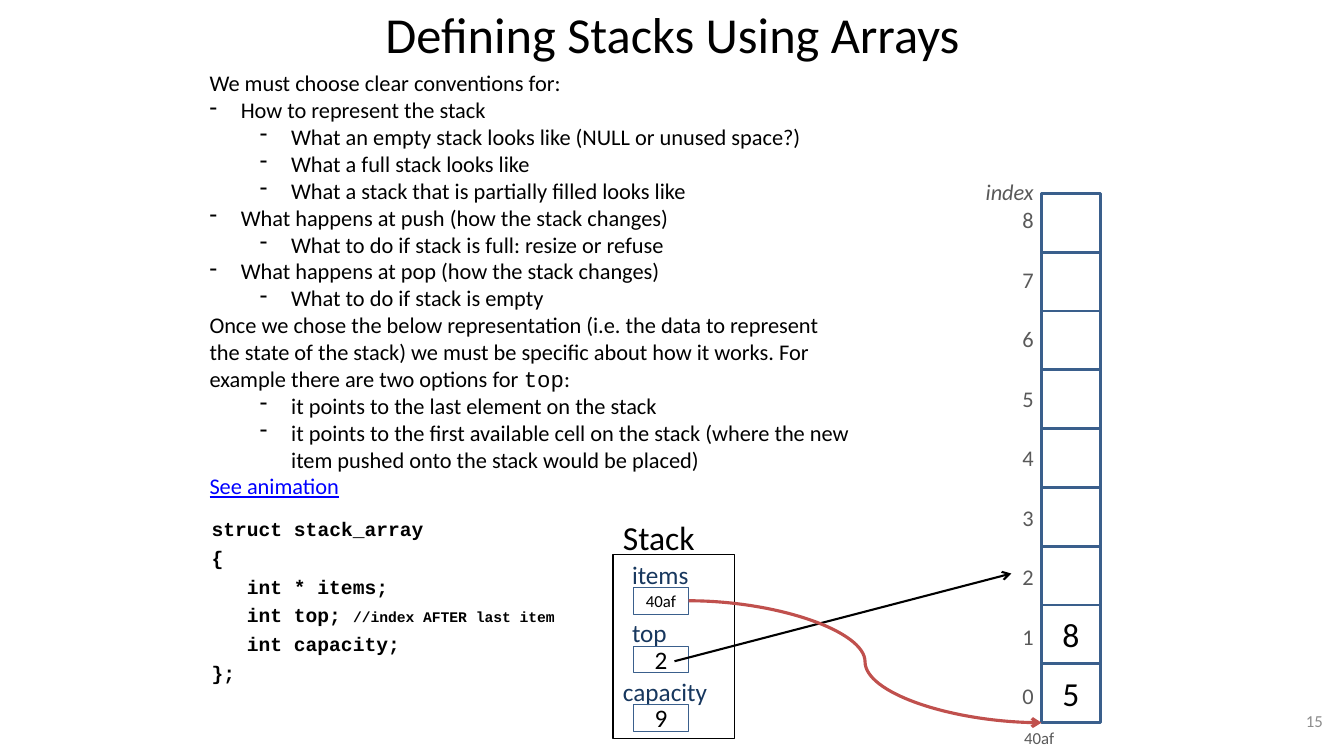
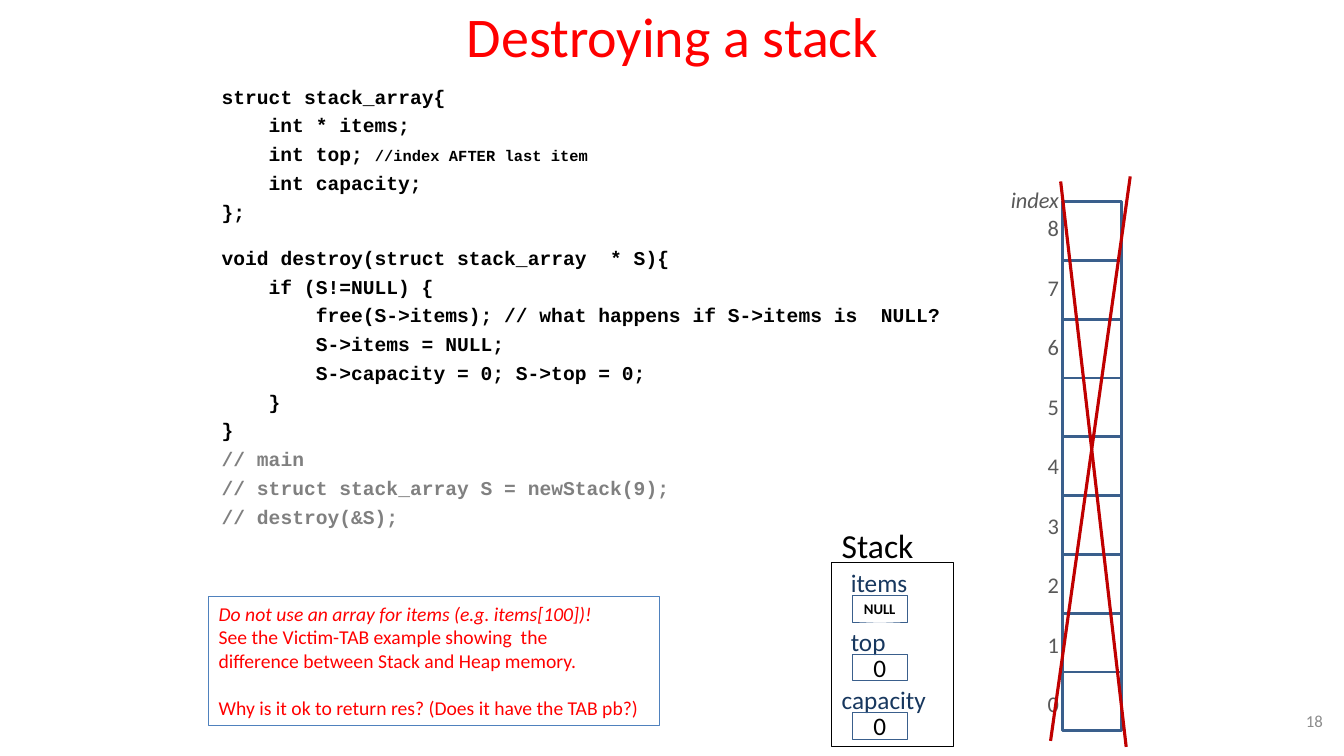
from lxml.etree import SubElement
from pptx import Presentation
from pptx.dml.color import RGBColor
from pptx.enum.shapes import MSO_CONNECTOR, MSO_SHAPE
from pptx.enum.text import MSO_ANCHOR, MSO_AUTO_SIZE, PP_ALIGN
from pptx.oxml.ns import qn
from pptx.util import Inches, Pt

COLORS = {
    "black": "000000", "white": "FFFFFF", "red": "FF0000", "cross": "C00000",
    "navy": "17375E", "cell": "3A5F8C", "frame": "4F81BD", "curve": "C0504D",
    "label": "595959", "comment": "808080", "number": "8C8C8C", "link": "0000FF",
}
BODY_FONT, CODE_FONT = "Calibri", "Courier New"
CODE_SIZE = 14
CODE_COLUMN = Pt(CODE_SIZE * 0.6)
CELL_COUNT, CELL_SIZE = 9, 5.25 / 9
LABEL_STEP, FIELD_STEP = 0.59, 0.58


def color(name):
    return RGBColor.from_string(COLORS[name])


def write_span(para, text, size=16, font=BODY_FONT, ink="black",
               bold=False, italic=False, underline=False):
    span = para.add_run()
    span.text = text
    style = span.font
    style.size, style.name = Pt(size), font
    style.bold, style.italic, style.underline = bold, italic, underline
    style.color.rgb = color(ink)


def write(frame, text, align=PP_ALIGN.LEFT, before=0, indent=0, bullet=None, **style):
    """Fill the first paragraph if it is empty, otherwise add one."""
    para = frame.paragraphs[0]
    if para.runs:
        para = frame.add_paragraph()
    para.alignment = align
    para.space_before = Pt(before)
    properties = para._p.get_or_add_pPr()
    properties.set("marL", str(int(indent)))
    if bullet:
        properties.set("indent", str(-Inches(0.31)))
        SubElement(properties, qn("a:buChar")).set("char", bullet)
    write_span(para, text, **style)
    return para


def add_text(page, left, top, width, height, text=None, wrap=False,
             anchor=MSO_ANCHOR.TOP, **style):
    box = page.shapes.add_textbox(Inches(left), Inches(top), Inches(width), Inches(height))
    frame = box.text_frame
    frame.word_wrap = wrap
    frame.vertical_anchor = anchor
    if text:
        write(frame, text, **style)
    return frame


def add_rect(page, left, top, width, height, line, weight, fill=None, text=None, **style):
    rect = page.shapes.add_shape(MSO_SHAPE.RECTANGLE, Inches(left), Inches(top),
                                 Inches(width), Inches(height))
    rect.shadow.inherit = False
    if fill:
        rect.fill.solid()
        rect.fill.fore_color.rgb = color(fill)
    else:
        rect.fill.background()
    rect.line.color.rgb = color(line)
    rect.line.width = Pt(weight)
    if text:
        frame = rect.text_frame
        frame.margin_left = frame.margin_right = 0
        frame.margin_top = frame.margin_bottom = 0
        frame.vertical_anchor = MSO_ANCHOR.MIDDLE
        write(frame, text, align=PP_ALIGN.CENTER, **style)
    return rect


def add_line(page, start, end, ink, weight, kind=MSO_CONNECTOR.STRAIGHT, arrow=False):
    ends = [Inches(value) for value in (*start, *end)]
    connector = page.shapes.add_connector(kind, *ends)
    connector.line.color.rgb = color(ink)
    connector.line.width = Pt(weight)
    if arrow:
        SubElement(connector.line._get_or_add_ln(), qn("a:tailEnd")).set("type", "arrow")
    SubElement(connector._element.spPr, qn("a:effectLst"))


def add_page(deck, title, number, top, height, size, ink):
    page = deck.slides.add_slide(deck.slide_layouts[5])
    box = page.shapes.title
    box.left, box.top = Inches(2.17), Inches(top)
    box.width, box.height = Inches(9), Inches(height)
    frame = box.text_frame
    frame.auto_size = MSO_AUTO_SIZE.NONE
    frame.vertical_anchor = MSO_ANCHOR.MIDDLE
    write(frame, title, align=PP_ALIGN.CENTER, size=size, ink=ink)
    add_text(page, 10.11, 6.95, 3.11, 0.4, str(number), wrap=True,
             anchor=MSO_ANCHOR.MIDDLE, align=PP_ALIGN.RIGHT, size=12, ink="number")
    return page


def add_code(page, left, top, width, height, blocks, note_size):
    """Each line is (columns of indent, code, optional small note)."""
    frame = add_text(page, left, top, width, height, wrap=True)
    for block_index, block in enumerate(blocks):
        for line_index, (columns, code, *notes) in enumerate(block):
            new_block = block_index > 0 and line_index == 0
            ink = "comment" if code.startswith("//") else "black"
            para = write(frame, code, before=16.3 if new_block else 3.7,
                         indent=columns * CODE_COLUMN, size=CODE_SIZE,
                         font=CODE_FONT, bold=True, ink=ink)
            for note in notes:
                write_span(para, note, size=note_size, font=CODE_FONT, bold=True)


def add_array(page, left, top, label_left, values=()):
    """Draw the cells with index 0 at the bottom; values fill them from there."""
    for index in range(CELL_COUNT):
        row = CELL_COUNT - 1 - index
        text = values[index] if index < len(values) else None
        add_rect(page, left, top + row * CELL_SIZE, CELL_SIZE, CELL_SIZE,
                 "cell", 2, fill="white", text=text, size=24)
        add_text(page, label_left, top + 0.08 + row * LABEL_STEP, 0.32, 0.37,
                 str(index), align=PP_ALIGN.RIGHT, ink="label")
    add_text(page, label_left - 0.36, top - 0.2, 0.68, 0.37, "index",
             align=PP_ALIGN.RIGHT, italic=True, ink="label")


def add_stack(page, left, top, items, top_value, capacity, items_style):
    add_text(page, left, top - 0.42, 1, 0.5, "Stack", size=24)
    number_style = {"size": 18}
    fields = [("items", 0.09, items, items_style),
              ("top", 0.09, top_value, number_style),
              ("capacity", 0, capacity, number_style)]
    for row, (name, shift, value, style) in enumerate(fields):
        field_top = top + row * FIELD_STEP
        add_text(page, left + shift, field_top, 1.21 - shift, 0.4, name,
                 size=18, ink="navy")
        add_rect(page, left + 0.2, field_top + 0.33, 0.55, 0.26, "cell", 0.25,
                 text=value, **style)
    add_rect(page, left, top, 1.21, 1.83, "black", 0.75)


def add_conventions(page, left, top, width, height):
    frame = add_text(page, left, top, width, height, wrap=True)

    def add_points(points):
        for level, text in points:
            write(frame, text, indent=Inches(0.31 + 0.5 * level), bullet="-")

    write(frame, "We must choose clear conventions for:")
    add_points([
        (0, "How to represent the stack"),
        (1, "What an empty stack looks like (NULL or unused space?)"),
        (1, "What a full stack looks like"),
        (1, "What a stack that is partially filled looks like"),
        (0, "What happens at push (how the stack changes)"),
        (1, "What to do if stack is full: resize or refuse"),
        (0, "What happens at pop (how the stack changes)"),
        (1, "What to do if stack is empty"),
    ])
    para = write(frame, "Once we chose the below representation (i.e. the data to represent "
                 "the state of the stack) we must be specific about how it works. "
                 "For example there are two options for ")
    write_span(para, "top", font=CODE_FONT)
    write_span(para, ":")
    add_points([
        (1, "it points to the last element on the stack"),
        (1, "it points to the first available cell on the stack "
            "(where the new item pushed onto the stack would be placed)"),
    ])
    write(frame, "See animation", ink="link", underline=True)


def add_notice(page, left, top, width, height):
    box = add_rect(page, left, top, width, height, "frame", 0.75)
    frame = box.text_frame
    frame.vertical_anchor = MSO_ANCHOR.TOP
    style = {"size": 14, "ink": "red"}
    write(frame, "Do not use an array for items (e.g. items[100])!", italic=True, **style)
    write(frame, "See the Victim-TAB example showing  the", **style)
    write(frame, "difference between Stack and Heap memory.", **style)
    write(frame, "Why is it ok to return res? (Does it have the TAB pb?)", before=17, **style)


def build_defining(deck):
    page = add_page(deck, "Defining Stacks Using Arrays", 15, 0, 0.66, 36, "black")
    add_code(page, 2, 5.08, 3.83, 2.11, [[
        (0, "struct stack_array"),
        (0, "{"),
        (3, "int * items;"),
        (3, "int top; ", "//index AFTER last item"),
        (3, "int capacity;"),
        (0, "};"),
    ]], 10.5)
    add_array(page, 10.33, 1.92, 10.03, values=("5", "8"))
    add_text(page, 10.06, 7.17, 0.5, 0.3, "40af", size=12, ink="label")
    add_stack(page, 6.08, 5.5, "40af", "2", "9", {"size": 12})
    add_line(page, (6.69, 6.56), (10.03, 5.69), "black", 1.5, arrow=True)
    add_line(page, (6.83, 5.96), (10.33, 7.17), "curve", 2.25,
             kind=MSO_CONNECTOR.CURVE, arrow=True)
    add_conventions(page, 1.98, 0.64, 6.57, 4.81)


def build_destroying(deck):
    page = add_page(deck, "Destroying a stack", 18, 0.08, 0.54, 40, "red")
    add_code(page, 2.1, 0.79, 7.82, 4.69, [[
        (0, "struct stack_array{"),
        (4, "int * items;"),
        (4, "int top; ", "//index AFTER last item"),
        (4, "int capacity;"),
        (0, "};"),
    ], [
        (0, "void destroy(struct stack_array  * S){"),
        (4, "if (S!=NULL) {"),
        (8, "free(S->items); // what happens if S->items is  NULL?"),
        (8, "S->items = NULL;"),
        (8, "S->capacity = 0; S->top = 0;"),
        (4, "}"),
        (0, "}"),
        (0, "// main"),
        (0, "// struct stack_array S = newStack(9);"),
        (0, "// destroy(&S);"),
    ]], 11)
    add_notice(page, 2.07, 5.92, 4.47, 1.28)
    add_array(page, 10.54, 2, 10.28)
    add_stack(page, 8.25, 5.58, "NULL", "0", "0", {"size": 10.5, "bold": True})
    for start, end in [((10.52, 1.8), (11.17, 7.41)), ((11.21, 1.75), (10.42, 7.35))]:
        add_line(page, start, end, "cross", 2.25)


def main():
    deck = Presentation()
    deck.slide_width, deck.slide_height = Inches(13.33), Inches(7.5)
    build_defining(deck)
    build_destroying(deck)
    deck.save("out.pptx")


if __name__ == "__main__":
    main()
